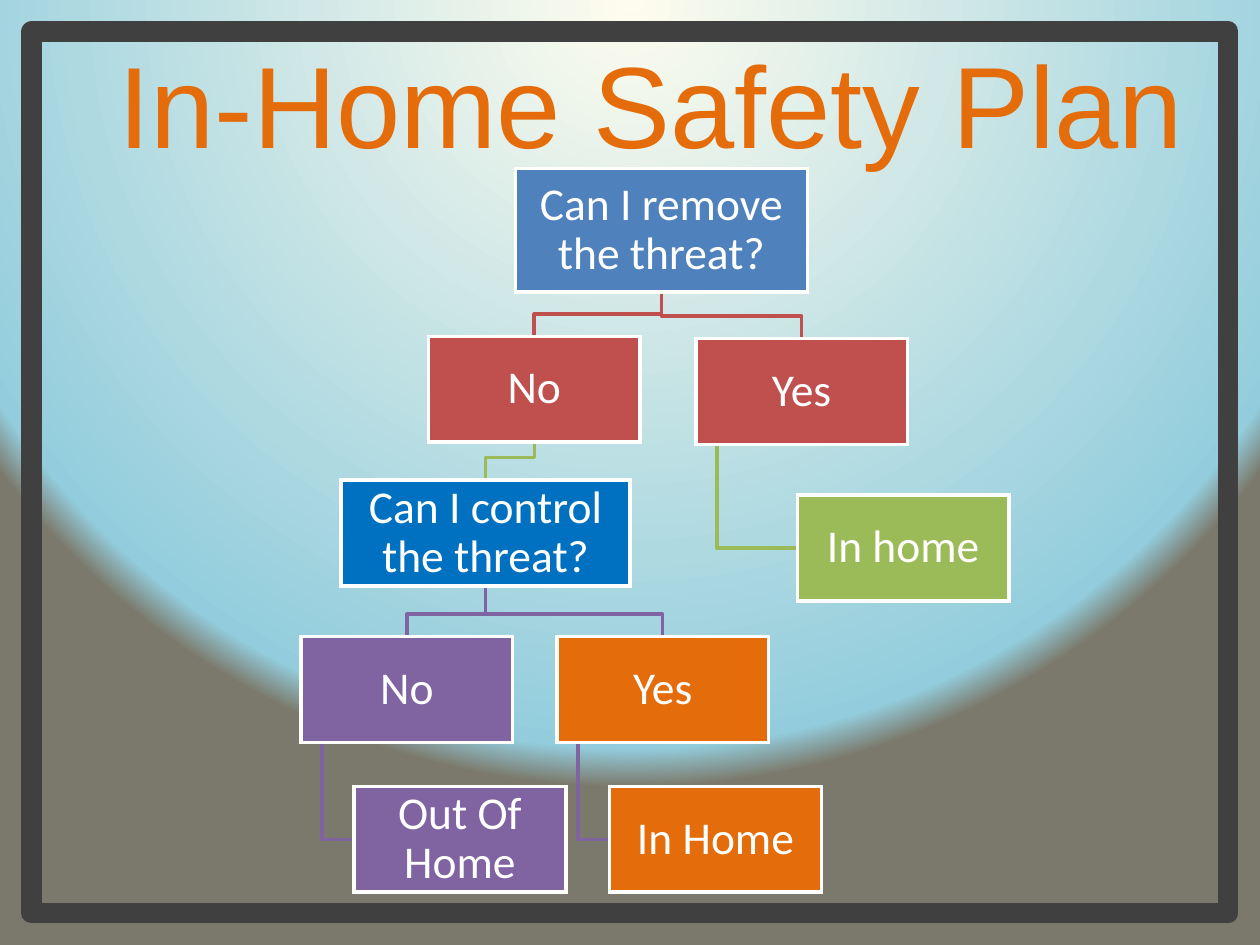
from dataclasses import dataclass
from lxml import etree
from pptx import Presentation
from pptx.dml.color import RGBColor
from pptx.enum.shapes import MSO_SHAPE
from pptx.enum.text import MSO_ANCHOR, PP_ALIGN
from pptx.oxml import parse_xml
from pptx.oxml.ns import nsdecls, qn
from pptx.util import Pt

RECTANGLE = MSO_SHAPE.RECTANGLE
CENTER = PP_ALIGN.CENTER
MIDDLE = MSO_ANCHOR.MIDDLE


@dataclass(frozen=True)
class Theme:
    cream: str = "FEFCEE"
    sky: str = "93CDDD"
    stone: str = "7B796B"
    frame: str = "404040"
    white: str = "FFFFFF"
    black: str = "000000"
    blue: str = "4F81BD"
    deep_blue: str = "0070C0"
    red: str = "C0504D"
    green: str = "9BBB59"
    purple: str = "8064A2"
    orange: str = "E46C0A"
    title_font: str = "Arial"
    box_font: str = "Calibri"
    title_size: int = 66
    box_size: int = 26


theme = Theme()


def write_text(shape, text, font, size, color, inset=None, spacing=None):
    frame = shape.text_frame
    frame.word_wrap = True
    frame.vertical_anchor = MIDDLE
    if inset is not None:
        frame.margin_left = frame.margin_right = Pt(inset)
        frame.margin_top = frame.margin_bottom = Pt(inset)
    paragraph = frame.paragraphs[0]
    paragraph.alignment = CENTER
    if spacing is not None:
        paragraph.line_spacing = spacing
    run = paragraph.add_run()
    run.text = text
    run.font.name = font
    run.font.size = Pt(size)
    run.font.color.rgb = RGBColor.from_string(color)
    return run


def set_line(shape, color, width, join):
    shape.shadow.inherit = False
    shape.line.color.rgb = RGBColor.from_string(color)
    shape.line.width = Pt(width)
    line = shape.line._get_or_add_ln()
    corner = etree.SubElement(line, qn(f"a:{join}"))
    if join == "miter":
        corner.set("lim", "800000")


presentation = Presentation()
presentation.slide_width = Pt(720)
presentation.slide_height = Pt(540)
slide = presentation.slides.add_slide(presentation.slide_layouts[5])

stops = "".join(
    f'<a:gs pos="{position * 1000}"><a:srgbClr val="{color}"/></a:gs>'
    for position, color in [(0, theme.cream), (95, theme.sky), (100, theme.stone)]
)
slide.element.cSld.insert(0, parse_xml(
    f'<p:bg {nsdecls("p", "a")}><p:bgPr><a:gradFill rotWithShape="1">'
    f'<a:gsLst>{stops}</a:gsLst><a:path path="circle">'
    '<a:fillToRect l="50000" t="-80000" r="50000" b="180000"/></a:path>'
    '</a:gradFill><a:effectLst/></p:bgPr></p:bg>'
))

title = slide.shapes.title
title.left, title.top, title.width, title.height = Pt(12.2), Pt(21.6), Pt(720), Pt(74.2)
title_run = write_text(title, "In-Home Safety Plan", font=theme.title_font,
                       size=theme.title_size, color=theme.orange)
title_run.font._element.insert(0, parse_xml(
    f'<a:ln {nsdecls("a")} w="{Pt(0.83)}"><a:solidFill>'
    f'<a:srgbClr val="{theme.black}"/></a:solidFill></a:ln>'
))

box_width, box_height = 121, 60.5
boxes = {
    "remove": ("Can I remove the threat?", 294.5, 96.4, 167, 70.6, theme.blue),
    "remove no": ("No", 244.8, 192.2, box_width, box_height, theme.red),
    "control": ("Can I control the threat?", 195, 274.3, 165, box_height, theme.deep_blue),
    "control no": ("No", 172, 363.8, box_width, box_height, theme.purple),
    "out of home": ("Out Of Home", 202.3, 449.4, box_width, box_height, theme.purple),
    "control yes": ("Yes", 318.2, 363.8, box_width, box_height, theme.orange),
    "in home after control": ("In Home", 348.4, 449.4, box_width, box_height, theme.orange),
    "remove yes": ("Yes", 397.6, 193.5, box_width, box_height, theme.red),
    "in home after removal": ("In home", 455.6, 283, box_width, box_height, theme.green),
}

links = [
    ("remove yes", "in home after removal", "hang", theme.green),
    ("remove", "remove yes", "branch", theme.red),
    ("control yes", "in home after control", "hang", theme.purple),
    ("control", "control yes", "branch", theme.purple),
    ("control no", "out of home", "hang", theme.purple),
    ("control", "control no", "branch", theme.purple),
    ("remove no", "control", "branch", theme.green),
    ("remove", "remove no", "branch", theme.red),
]
turn_gap = 12.8
for parent, child, kind, color in links:
    _, left, top, width, height, _ = boxes[parent]
    _, child_left, child_top, child_width, child_height, _ = boxes[child]
    bottom = top + height
    if kind == "hang":
        start_x = left + width / 10
        child_middle = child_top + child_height / 2
        route = [(start_x, child_middle), (child_left, child_middle)]
    else:
        start_x = left + width / 2
        child_center = child_left + child_width / 2
        turn = child_top - turn_gap
        route = [(start_x, turn), (child_center, turn), (child_center, child_top)]
    builder = slide.shapes.build_freeform(Pt(start_x), Pt(bottom))
    builder.add_line_segments([(Pt(x), Pt(y)) for x, y in route], close=False)
    link = builder.convert_to_shape()
    link.fill.background()
    set_line(link, color, 2, "round")

for text, left, top, width, height, color in boxes.values():
    box = slide.shapes.add_shape(RECTANGLE, Pt(left), Pt(top), Pt(width), Pt(height))
    box.fill.solid()
    box.fill.fore_color.rgb = RGBColor.from_string(color)
    set_line(box, theme.white, 2, "miter")
    write_text(box, text, font=theme.box_font, size=theme.box_size,
               color=theme.white, inset=1.3, spacing=0.9)

border = slide.shapes.add_shape(RECTANGLE, Pt(18), Pt(18), Pt(684), Pt(504))
border.fill.background()
set_line(border, theme.frame, 11.5, "round")

presentation.save("out.pptx")
